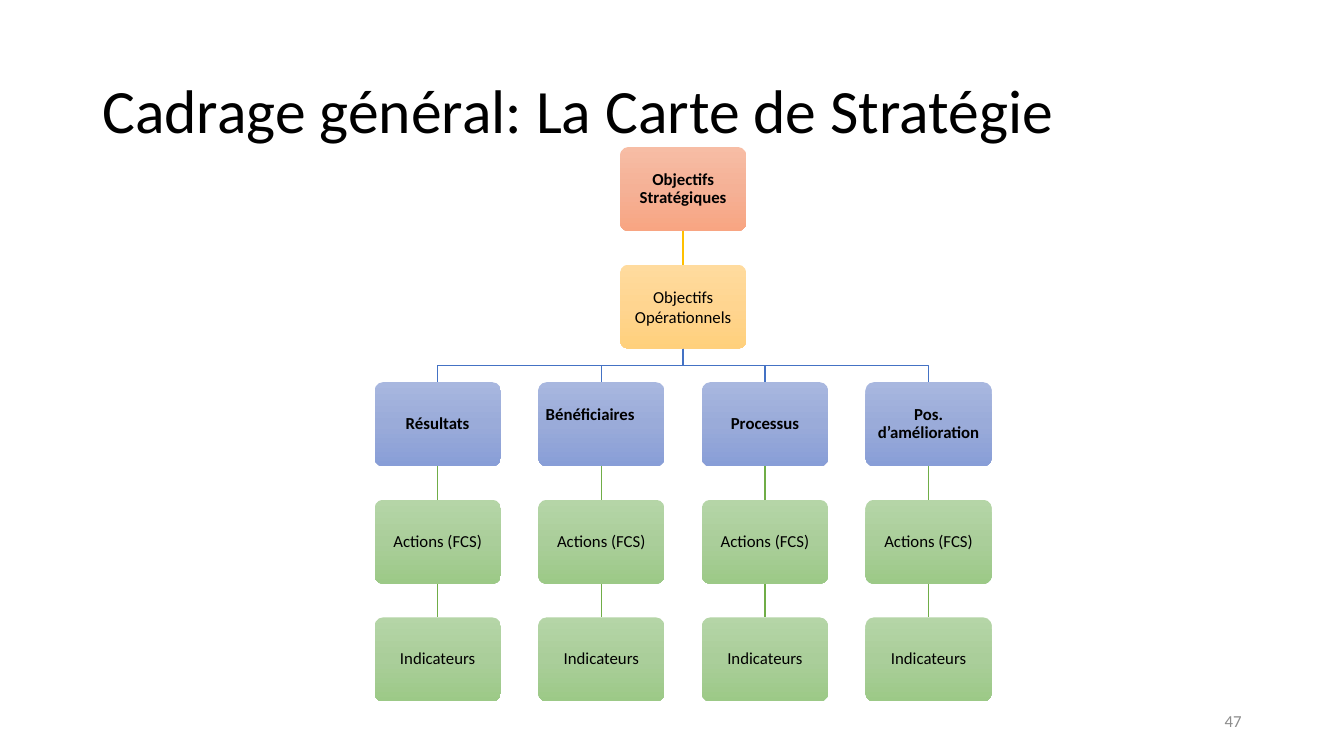
from copy import deepcopy

from lxml.etree import SubElement
from pptx import Presentation
from pptx.dml.color import RGBColor
from pptx.enum.shapes import MSO_CONNECTOR as CONNECTOR, MSO_SHAPE as SHAPE
from pptx.enum.text import MSO_ANCHOR as ANCHOR, PP_ALIGN as ALIGN
from pptx.oxml.ns import qn
from pptx.util import Pt

BLACK = RGBColor(0x00, 0x00, 0x00)
GRAY = RGBColor(0x8C, 0x8C, 0x8C)
GOLD = RGBColor(0xFF, 0xC0, 0x00)
BLUE = RGBColor(0x44, 0x72, 0xC4)
GREEN = RGBColor(0x70, 0xAD, 0x47)

# Box gradients, top to bottom
ORANGE_FILL = RGBColor(0xF7, 0xBD, 0xA5), RGBColor(0xF5, 0xB1, 0x96), RGBColor(0xF8, 0xA5, 0x82)
GOLD_FILL = RGBColor(0xFF, 0xDB, 0x9E), RGBColor(0xFF, 0xD5, 0x90), RGBColor(0xFF, 0xD0, 0x7C)
BLUE_FILL = RGBColor(0xA8, 0xB7, 0xDF), RGBColor(0x9A, 0xAB, 0xD9), RGBColor(0x88, 0x9E, 0xD7)
GREEN_FILL = RGBColor(0xB5, 0xD5, 0xA7), RGBColor(0xAA, 0xCE, 0x9A), RGBColor(0x9C, 0xC9, 0x87)

BOX_W, BOX_H = 90.2, 60
ROOT_X = 488
COLUMN_PITCH, ROW_PITCH = 116.9, 84
ROW_TOPS = [105 + ROW_PITCH * row for row in range(5)]
AXES = ["Résultats", "Bénéficiaires", "Processus", "Pos. d’amélioration"]


class StrategyMap:
    font = "Calibri"
    box_size = 12
    inset = 3.6
    line_width = 1

    def __init__(self, slide):
        self.shapes = slide.shapes

    def set_text(self, tf, text, size, color=BLACK, bold=False, align=ALIGN.LEFT, spacing=1.0):
        tf.word_wrap = True
        tf.vertical_anchor = ANCHOR.MIDDLE
        p = tf.paragraphs[0]
        p.text = text
        p.alignment = align
        p.line_spacing = spacing
        p.font.name = self.font
        p.font.size = Pt(size)
        p.font.bold = bold
        p.font.color.rgb = color

    def text(self, left, top, width, height, text, size, **style):
        sp = self.shapes.add_textbox(Pt(left), Pt(top), Pt(width), Pt(height))
        self.set_text(sp.text_frame, text, size, **style)

    def box(self, center, top, text, colors, bold=False, align=ALIGN.CENTER,
            spacing=0.9, bottom=inset):
        sp = self.shapes.add_shape(SHAPE.ROUNDED_RECTANGLE, Pt(center - BOX_W / 2),
                                   Pt(top), Pt(BOX_W), Pt(BOX_H))
        sp.adjustments[0] = 0.1
        sp.shadow.inherit = False
        sp.line.fill.background()
        self.shade(sp, colors)
        tf = sp.text_frame
        tf.margin_left = tf.margin_right = tf.margin_top = Pt(self.inset)
        tf.margin_bottom = Pt(bottom)
        self.set_text(tf, text, self.box_size, bold=bold, align=align, spacing=spacing)

    def shade(self, sp, colors):
        """Fill with a three-stop gradient running downwards."""
        sp.fill.gradient()
        sp.fill.gradient_angle = 270
        stops = sp._element.spPr.find(".//" + qn("a:gsLst"))
        stops.insert(1, deepcopy(stops[0]))
        for stop, position, color in zip(sp.fill.gradient_stops, (0, 0.5, 1), colors):
            stop.position = position
            stop.color.rgb = color

    def stem(self, x, top, bottom, color):
        """Draw a vertical link between two boxes."""
        sp = self.shapes.add_connector(CONNECTOR.STRAIGHT, Pt(x), Pt(top), Pt(x), Pt(bottom))
        sp.line.color.rgb = color
        sp.line.width = Pt(self.line_width)
        SubElement(sp._element.spPr, qn("a:effectLst"))

    def branch(self, x1, top, x2, bottom, color):
        """Draw a link that goes down, across and down."""
        middle = (top + bottom) / 2
        outline = self.shapes.build_freeform(Pt(x1), Pt(top))
        outline.add_line_segments([(Pt(x1), Pt(middle)), (Pt(x2), Pt(middle)),
                                   (Pt(x2), Pt(bottom))], close=False)
        sp = outline.convert_to_shape()
        sp.shadow.inherit = False
        sp.fill.background()
        sp.line.color.rgb = color
        sp.line.width = Pt(self.line_width)


def main():
    prs = Presentation()
    prs.slide_width, prs.slide_height = Pt(960), Pt(540)
    s = StrategyMap(prs.slides.add_slide(prs.slide_layouts[6]))

    s.text(66, 28.8, 828, 104.4, "Cadrage général: La Carte de Stratégie", 44, spacing=0.9)
    s.text(678, 500.5, 216, 28.8, "47", 12, color=GRAY, align=ALIGN.RIGHT)

    strategic, operational, axis_top, actions, indicators = ROW_TOPS
    s.box(ROOT_X, strategic, "Objectifs Stratégiques", ORANGE_FILL, bold=True)
    s.stem(ROOT_X, strategic + BOX_H, operational, GOLD)
    s.box(ROOT_X, operational, "Objectifs Opérationnels", GOLD_FILL, spacing=1.0)

    for column, axis in enumerate(AXES):
        x = ROOT_X + (column - 1.5) * COLUMN_PITCH
        s.branch(ROOT_X, operational + BOX_H, x, axis_top, BLUE)
        raised = {"align": ALIGN.LEFT, "bottom": 17} if axis == "Bénéficiaires" else {}
        s.box(x, axis_top, axis, BLUE_FILL, bold=True, **raised)
        for top, label in ((actions, "Actions (FCS)"), (indicators, "Indicateurs")):
            s.stem(x, top - ROW_PITCH + BOX_H, top, GREEN)
            s.box(x, top, label, GREEN_FILL)

    prs.save("out.pptx")


if __name__ == "__main__":
    main()
